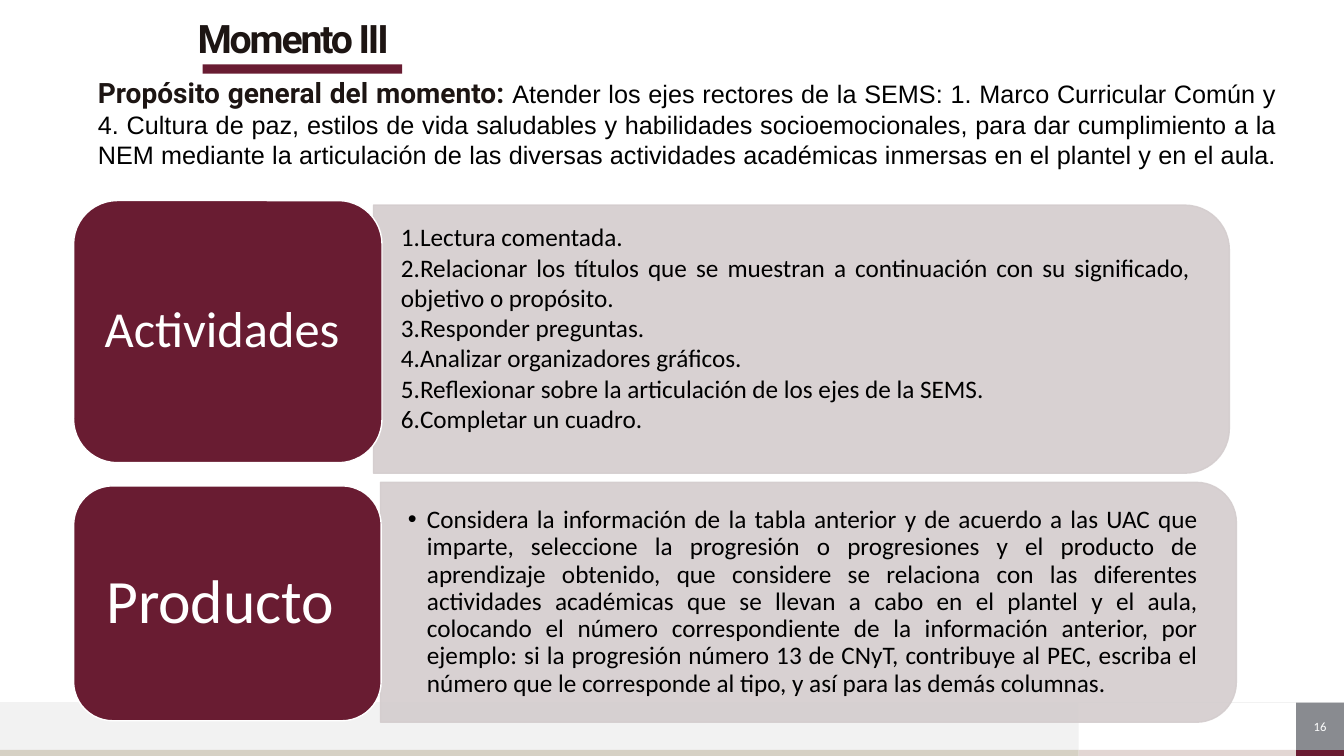
from dataclasses import dataclass

from lxml.etree import SubElement
from pptx import Presentation
from pptx.dml.color import RGBColor
from pptx.enum.shapes import MSO_CONNECTOR as Connector, MSO_SHAPE as Shape
from pptx.enum.text import MSO_ANCHOR as Anchor, PP_ALIGN as Align
from pptx.oxml.ns import qn
from pptx.util import Inches, Pt


@dataclass(frozen=True)
class Theme:
    """Colours, fonts and type sizes of the slide."""
    wine: str = "691C32"
    panel: str = "D4CDCE"
    mist: str = "F2F2F2"
    sand: str = "D6D1C4"
    blush: str = "E2D6D3"
    grey: str = "898B90"
    ink: str = "1D1513"
    black: str = "000000"
    white: str = "FFFFFF"
    heading: str = "Roboto"
    plain: str = "Arial"
    body: str = "Calibri"
    title_size: int = 28
    lead_size: int = 20
    text_size: int = 18
    number_size: int = 9


THEME = Theme()
WIDTH, HEIGHT = Inches(13.33), Inches(7.5)
FOOTER_TOP, FOOTER_EDGE = 92.93, 99.2
FOOTER_SPLIT, NUMBER_LEFT = 80.25, 96.45

PURPOSE_LEAD = "Propósito general del momento: "
PURPOSE = (
    "Atender los ejes rectores de la SEMS: 1. Marco Curricular Común y 4. Cultura de paz, "
    "estilos de vida saludables y habilidades socioemocionales, para dar cumplimiento a la NEM "
    "mediante la articulación de las diversas actividades académicas inmersas en el plantel y en el aula. "
)
ACTIVITIES = [
    "Lectura comentada.",
    "Relacionar los títulos que se muestran a continuación con su significado, objetivo o propósito.",
    "Responder preguntas.",
    "Analizar organizadores gráficos.",
    "Reflexionar sobre la articulación de los ejes de la SEMS.",
    "Completar un cuadro.",
]
PRODUCT = [
    "Considera la información de la tabla anterior y de acuerdo a las UAC que imparte, seleccione "
    "la progresión o progresiones y el producto de aprendizaje obtenido, que considere se relaciona "
    "con las diferentes actividades académicas que se llevan a cabo en el plantel y el aula, "
    "colocando el número correspondiente de la información anterior, por ejemplo: si la progresión "
    "número 13 de CNyT, contribuye al PEC, escriba el número que le corresponde al tipo, y así para "
    "las demás columnas."
]


def column(share):
    """Return a length as hundredths of the slide width."""
    return int(WIDTH * share / 100)


def row(share):
    """Return a length as hundredths of the slide height."""
    return int(HEIGHT * share / 100)


def place(left, top, width, height):
    """Turn grid shares into slide lengths."""
    return column(left), row(top), column(width), row(height)


def style_font(font, name, size, color, bold=False):
    """Set the look of a font."""
    font.name, font.size, font.bold = name, Pt(size), bold
    font.color.rgb = RGBColor.from_string(color)


def set_frame(shape, anchor, across=0, down=0):
    """Wrap the text of a shape and set its anchor and margins."""
    frame = shape.text_frame
    frame.word_wrap, frame.vertical_anchor = True, anchor
    frame.margin_left = frame.margin_right = column(across)
    frame.margin_top = frame.margin_bottom = row(down)
    return frame


def add_block(slide, kind, box, fill, line=None):
    """Add a filled preset shape with an optional outline."""
    shape = slide.shapes.add_shape(kind, *box)
    shape.shadow.inherit = False
    shape.fill.solid()
    shape.fill.fore_color.rgb = RGBColor.from_string(fill)
    if line:
        shape.line.color.rgb = RGBColor.from_string(line)
        shape.line.width = Pt(1)
    else:
        shape.line.fill.background()
    return shape


def add_label(shape, text, size, across=0, down=0, spacing=None):
    """Write centred white text inside a shape."""
    paragraph = set_frame(shape, Anchor.MIDDLE, across, down).paragraphs[0]
    paragraph.text, paragraph.alignment = text, Align.CENTER
    paragraph.line_spacing = spacing
    style_font(paragraph.font, THEME.body, size, THEME.white)


def add_footer(slide, number):
    """Add the footer bands, the hairline and the page number."""
    edge = 100 - FOOTER_EDGE
    band = FOOTER_EDGE - FOOTER_TOP
    number_width = 100 - NUMBER_LEFT
    bands = [
        (FOOTER_SPLIT, FOOTER_EDGE, NUMBER_LEFT - FOOTER_SPLIT, edge, THEME.blush),
        (0, FOOTER_TOP, FOOTER_SPLIT, band, THEME.mist),
        (0, FOOTER_EDGE, FOOTER_SPLIT, edge, THEME.sand),
        (NUMBER_LEFT, FOOTER_EDGE, number_width, edge, THEME.wine),
    ]
    for *box, fill in bands:
        add_block(slide, Shape.RECTANGLE, place(*box), fill)
    hairline = slide.shapes.add_connector(
        Connector.STRAIGHT, WIDTH, row(FOOTER_TOP), 0, row(FOOTER_TOP))
    hairline.line.color.rgb = RGBColor.from_string(THEME.mist)
    hairline.line.width = Pt(0.5)
    SubElement(hairline._element.spPr, qn("a:effectLst"))
    square = add_block(slide, Shape.RECTANGLE,
                       place(NUMBER_LEFT, FOOTER_TOP, number_width, band), THEME.grey)
    add_label(square, number, THEME.number_size)


def add_title(slide, text):
    """Add the tightly spaced title and its accent bar."""
    add_block(slide, Shape.RECTANGLE, place(15.08, 8.53, 14.85, 1.2), THEME.wine)
    box = slide.shapes.add_textbox(*place(14.7, 2.27, 69.68, 6.27))
    paragraph = set_frame(box, Anchor.MIDDLE).paragraphs[0]
    paragraph.line_spacing = 0.9
    style_font(paragraph.font, THEME.heading, THEME.title_size, THEME.ink, True)
    run = paragraph.add_run()
    run.text = text
    run._r.get_or_add_rPr().set("spc", "-150")


def add_purpose(slide):
    """Add the justified statement of purpose with its bold lead."""
    box = slide.shapes.add_textbox(*place(6.53, 9.33, 89.18, 13.87))
    paragraph = set_frame(box, Anchor.TOP, 0.75, 0.67).paragraphs[0]
    paragraph.alignment = Align.JUSTIFY
    lead, rest = paragraph.add_run(), paragraph.add_run()
    lead.text, rest.text = PURPOSE_LEAD, PURPOSE
    style_font(lead.font, THEME.heading, THEME.lead_size, THEME.ink, True)
    style_font(rest.font, THEME.plain, THEME.text_size, THEME.black)


def add_panel(slide, left, top, width, height):
    """Add a translucent panel rounded on its right side."""
    across, down = column(width), row(height)
    box = (column(left) + (across - down) // 2, row(top) + (down - across) // 2, down, across)
    panel = add_block(slide, Shape.ROUND_2_SAME_RECTANGLE, box, THEME.panel, THEME.panel)
    panel.rotation = 90
    for color in panel._element.spPr.iter(qn("a:srgbClr")):
        SubElement(color, qn("a:alpha"), val="90000")


def add_list(slide, box, items, marker, marker_value, indent=0, spacing=None):
    """Add a justified list with automatic numbers or bullets."""
    frame = set_frame(slide.shapes.add_textbox(*place(*box)), Anchor.MIDDLE, 2, 1.87)
    for index, item in enumerate(items):
        paragraph = frame.add_paragraph() if index else frame.paragraphs[0]
        paragraph.text, paragraph.alignment = item, Align.JUSTIFY
        paragraph.level, paragraph.line_spacing = 1, spacing
        properties = paragraph._p.get_or_add_pPr()
        properties.set("marL", str(column(indent)))
        properties.set("indent", str(-column(indent)))
        SubElement(properties, qn("a:buFont"), typeface=THEME.plain if indent else THEME.body)
        SubElement(properties, qn(marker[0]), {marker[1]: marker_value})
        style_font(paragraph.font, THEME.body, THEME.text_size, THEME.black)


def add_tile(slide, box, text, size, across, down):
    """Add a rounded wine tile with its heading."""
    tile = add_block(slide, Shape.ROUNDED_RECTANGLE, place(*box), THEME.wine, THEME.white)
    add_label(tile, text, size, across, down, 0.9)


def main():
    """Build the slide and save it."""
    presentation = Presentation()
    presentation.slide_width, presentation.slide_height = WIDTH, HEIGHT
    slide = presentation.slides.add_slide(presentation.slide_layouts[6])
    add_footer(slide, "16")
    add_purpose(slide)
    add_title(slide, "Momento III")
    add_panel(slide, 27.79, 27.13, 63.68, 35.47)
    add_list(slide, (27.83, 27.33, 62.7, 32), ACTIVITIES,
             ("a:buAutoNum", "type"), "arabicPeriod")
    add_tile(slide, (5.48, 26.53, 22.95, 34.67), "Actividades ", 36, 1.1, 0.95)
    add_panel(slide, 28.31, 63.8, 63.68, 31.73)
    add_list(slide, (28.35, 65.33, 62.78, 28.67), PRODUCT, ("a:buChar", "char"), "•", 1.42, 0.9)
    add_tile(slide, (5.48, 64.27, 22.88, 31.07), "Producto ", 44, 1.35, 1.2)
    presentation.save("out.pptx")


if __name__ == "__main__":
    main()
